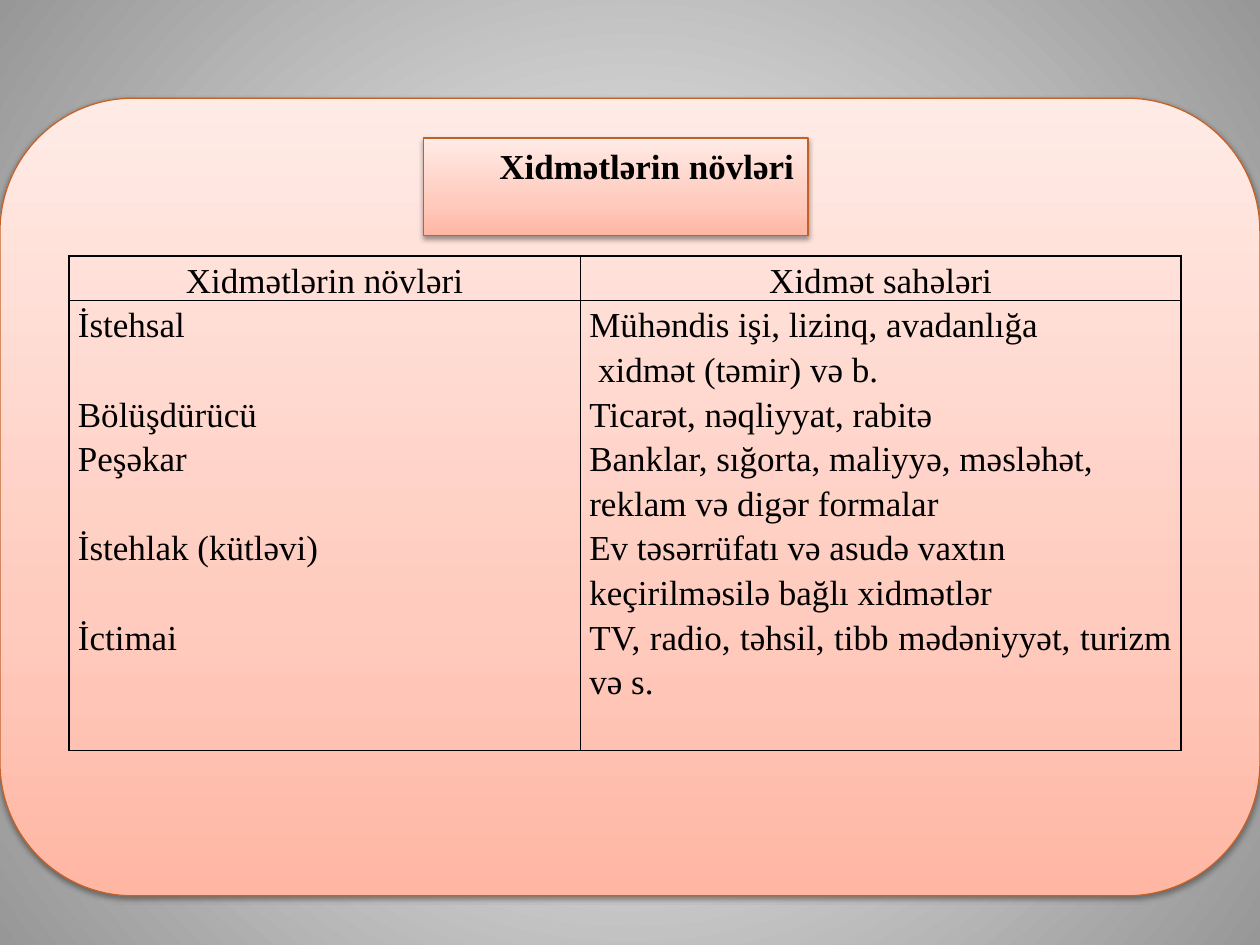
from dataclasses import dataclass

from lxml import etree
from pptx import Presentation
from pptx import util as u
from pptx.dml.color import RGBColor
from pptx.enum import shapes, text
from pptx.oxml import parse_xml
from pptx.oxml.ns import nsdecls, qn


@dataclass(frozen=True)
class Theme:
    font: str = "Times New Roman"
    size: u.Length = u.Pt(20)
    skipped_line: u.Length = u.Pt(25.5)
    ink: str = "000000"
    outline: str = "C36228"
    panel: tuple = ((0, "FFB6A3"), (35, "FFCBBE"), (100, "FFEBE6"))
    backdrop: tuple = ((0, "FFFFFF"), (100, "979797"))


theme = Theme()


def gradient(stops, direction):
    marks = "".join(f'<a:gs pos="{place * 1000}"><a:srgbClr val="{color}"/></a:gs>'
                    for place, color in stops)
    return parse_xml(f'<a:gradFill {nsdecls("a")} rotWithShape="1">'
                     f'<a:gsLst>{marks}</a:gsLst>{direction}</a:gradFill>')


def write(para, words, bold=False, **layout):
    span = para.add_run()
    span.text = words
    for name, value in {"name": theme.font, "size": theme.size, "bold": bold}.items():
        setattr(span.font, name, value)
    span.font.color.rgb = RGBColor.from_string(theme.ink)
    for name, value in layout.items():
        setattr(para, name, value)


deck = Presentation()
deck.slide_width, deck.slide_height = u.Cm(25.4), u.Cm(19.05)
page = deck.slides.add_slide(deck.slide_layouts[6])

# Background: light centre, grey edges
page.background.fill.gradient()
backdrop = page.background._cSld.find(".//" + qn("a:gradFill"))
backdrop.getparent().replace(backdrop, gradient(
    theme.backdrop,
    '<a:path path="circle"><a:fillToRect l="50000" t="50000" r="50000" b="50000"/></a:path>'))

# Rounded panel, then the title plate, in one look
kinds = shapes.MSO_SHAPE
places = (
    (kinds.ROUNDED_RECTANGLE, 0, 1.98, 25.4, 16.08),
    (kinds.RECTANGLE, 8.54, 2.78, 7.75, 1.97),
)
for kind, *place in places:
    box = page.shapes.add_shape(kind, *map(u.Cm, place))
    box.line.color.rgb = RGBColor.from_string(theme.outline)
    box.line.width = u.Pt(0.75)
    box.fill.gradient()
    props = box._element.spPr
    props.replace(props.find(qn("a:gradFill")),
                  gradient(theme.panel, '<a:lin ang="16200000" scaled="0"/>'))
    box.shadow.inherit = False
    props.find(qn("a:effectLst")).append(parse_xml(
        f'<a:outerShdw {nsdecls("a")} blurRad="{u.Pt(3.1)}" dist="{u.Pt(1.6)}" dir="5400000" '
        f'rotWithShape="0"><a:srgbClr val="{theme.ink}"><a:alpha val="38000"/>'
        '</a:srgbClr></a:outerShdw>'))

# Title, on the plate drawn last
frame = box.text_frame
frame_format = {"word_wrap": False, "vertical_anchor": text.MSO_ANCHOR.TOP,
                "margin_left": u.Cm(1.5)}
for name, value in frame_format.items():
    setattr(frame, name, value)
write(frame.paragraphs[0], "Xidmətlərin növləri", bold=True, alignment=text.PP_ALIGN.CENTER)

# Table: each line is (words, lines skipped above it)
rows = [
    [[("Xidmətlərin növləri", 0)], [("Xidmət sahələri", 0)]],
    [
        [("İstehsal", 0), ("Bölüşdürücü", 1), ("Peşəkar", 0),
         ("İstehlak (kütləvi)", 1), ("İctimai", 1)],
        [(words, 0) for words in (
            "Mühəndis işi, lizinq, avadanlığa",
            " xidmət (təmir) və b.",
            "Ticarət, nəqliyyat, rabitə",
            "Banklar, sığorta, maliyyə, məsləhət,",
            "reklam və digər formalar",
            "Ev təsərrüfatı və asudə vaxtın",
            "keçirilməsilə bağlı xidmətlər",
            "TV, radio, təhsil, tibb mədəniyyət, turizm və s.")],
    ],
]
widths, heights = (10.31, 12.11), (0.89, 9.07)
table = page.shapes.add_table(
    len(rows), len(widths), u.Cm(1.39), u.Cm(5.16),
    u.Cm(sum(widths)), u.Cm(sum(heights))).table
table.first_row = table.horz_banding = False
for column, width in zip(table.columns, widths):
    column.width = u.Cm(width)
for row, height in zip(table.rows, heights):
    row.height = u.Cm(height)

cell_format = {"margin_left": u.Cm(0.18), "margin_right": u.Cm(0.18),
               "margin_top": 0, "margin_bottom": 0}
aligns = (text.PP_ALIGN.CENTER, text.PP_ALIGN.JUSTIFY)
for r, (row, align) in enumerate(zip(rows, aligns)):
    for c, lines in enumerate(row):
        cell = table.cell(r, c)
        for name, value in cell_format.items():
            setattr(cell, name, value)
        cell.fill.background()
        for i, (words, skipped) in enumerate(lines):
            para = cell.text_frame.paragraphs[0] if i == 0 else cell.text_frame.add_paragraph()
            write(para, words, alignment=align, line_spacing=1.15,
                  space_before=skipped * theme.skipped_line)
        # Borders come before the fill in the cell properties
        for i, side in enumerate(("lnL", "lnR", "lnT", "lnB")):
            border = etree.Element(qn(f"a:{side}"), w=str(u.Pt(1)))
            fill = etree.SubElement(border, qn("a:solidFill"))
            etree.SubElement(fill, qn("a:srgbClr"), val=theme.ink)
            cell._tc.tcPr.insert(i, border)

deck.save("out.pptx")
